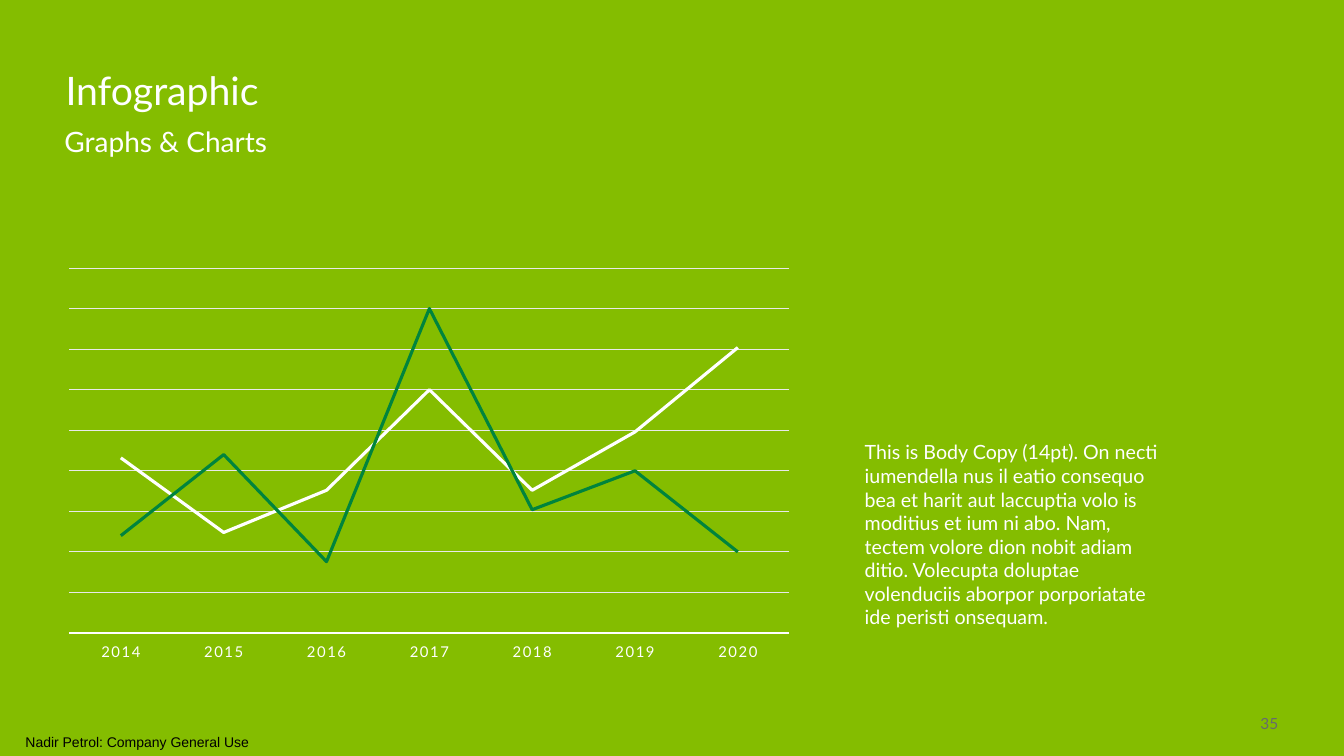
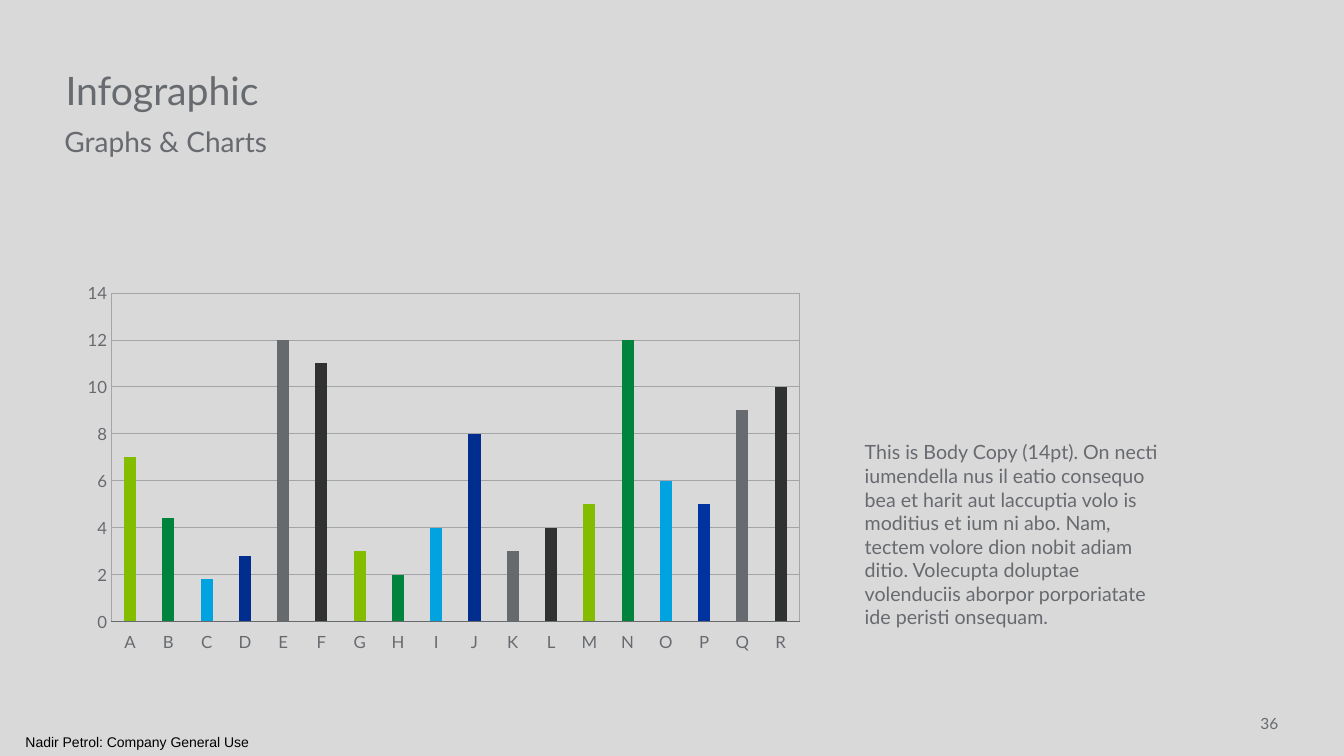
from itertools import cycle

from lxml import etree
from pptx import Presentation
from pptx.chart.data import CategoryChartData
from pptx.dml.color import RGBColor as RGB
from pptx.enum.chart import XL_CHART_TYPE as CT, XL_MARKER_STYLE as MARKER
from pptx.enum.chart import XL_TICK_LABEL_POSITION as LABELS, XL_TICK_MARK as TICK
from pptx.enum.text import MSO_ANCHOR as ANCHOR, PP_ALIGN as ALIGN
from pptx.oxml import parse_xml
from pptx.oxml.ns import nsdecls, qn
from pptx.util import Inches, Pt

C = {
    "white": "FFFFFF", "black": "000000", "text": "676A6E", "grey": "676A6C",
    "lime": "84BD00", "green": "00843D", "sky": "00A3E0", "navy": "002D8E",
    "blue": "0033A0", "charcoal": "303131", "paper": "DAD9DA",
    "pale grid": "E8E9E9", "grid": "A3A5A9",
}
C = {name: RGB.from_string(value) for name, value in C.items()}
FOOTER = "Nadir Petrol: Company General Use"
BODY = (
    "This is Body Copy (14pt). On necti iumendella nus il eatio consequo bea et "
    "harit aut laccuptia volo is moditius et ium ni abo. Nam, tectem volore dion "
    "nobit adiam ditio. Volecupta doluptae volenduciis aborpor porporiatate ide "
    "peristi onsequam."
)

prs = Presentation()
prs.slide_width, prs.slide_height = Inches(13.33), Inches(7.5)


def place(left, top, width, height):
    w, h = prs.slide_width / 100, prs.slide_height / 100
    return int(left * w), int(top * h), int(width * w), int(height * h)


def add_text(s, text, box, size, color, font="Lato", align=ALIGN.LEFT,
             anchor=ANCHOR.TOP, inset=(0, 0.05)):
    tf = s.shapes.add_textbox(*place(*box)).text_frame
    tf.word_wrap = True
    tf.vertical_anchor = anchor
    tf.margin_left = tf.margin_right = Inches(inset[0])
    tf.margin_top = tf.margin_bottom = Inches(inset[1])
    p = tf.paragraphs[0]
    p.text, p.alignment = text, align
    p.font.name, p.font.size, p.font.color.rgb = font, Pt(size), C[color]


pages = [
    dict(number=35, bg="lime", ink="white", kind=CT.LINE,
         box=(4.05, 34.4, 55.8, 53.07), plot=(0.02, 0.02, 0.96, 0.91),
         cats=[str(year) for year in range(2014, 2021)],
         series=[[54, 31, 44, 75, 44, 62, 88], [30, 55, 22, 100, 38, 50, 25]],
         label_size=10.6, axis=("white", 1.5), grid="pale grid", top=112.5, step=12.5),
    dict(number=36, bg="paper", ink="text", kind=CT.COLUMN_CLUSTERED,
         box=(4.58, 28, 56.63, 58.93), plot=(0.065, 0.183, 0.905, 0.737),
         cats=list("ABCDEFGHIJKLMNOPQR"),
         series=[[7, 4.4, 1.8, 2.8, 12, 11, 3, 2, 4, 8, 3, 4, 5, 12, 6, 5, 9, 10]],
         label_size=12, axis=("grey", 0.75), grid="grid", top=14, step=2),
]

for page in pages:
    s = prs.slides.add_slide(prs.slide_layouts[6])
    s.background.fill.solid()
    s.background.fill.fore_color.rgb = C[page["bg"]]
    ink = page["ink"]

    add_text(s, str(page["number"]), (92.18, 94, 2.93, 3.33), 11, "text",
             align=ALIGN.RIGHT, anchor=ANCHOR.MIDDLE)
    add_text(s, FOOTER, (0, 96.4, 20.4, 3.6), 10, "black", font="Arial",
             align=ALIGN.CENTER, anchor=ANCHOR.MIDDLE, inset=(0, 0))
    add_text(s, "Infographic", (4.88, 8.13, 37.13, 7.6), 28, ink)
    add_text(s, "Graphs & Charts", (4.05, 15.87, 37.13, 7.6), 20, ink, inset=(0.1, 0.05))
    add_text(s, BODY, (63.6, 57.6, 23.7, 41.47), 14, ink, inset=(0.1, 0.05))

    data = CategoryChartData()
    data.categories = page["cats"]
    for n, values in enumerate(page["series"], 1):
        data.add_series(f"Series {n}", values)
    chart = s.shapes.add_chart(page["kind"], *place(*page["box"]), data).chart
    chart.has_title = chart.has_legend = False
    chart.font.name, chart.font.size, chart.font.color.rgb = "Lato", Pt(10), C["text"]

    cat, val = chart.category_axis, chart.value_axis
    for axis in (cat, val):
        axis.major_tick_mark = axis.minor_tick_mark = TICK.NONE
        font = axis.tick_labels.font
        font.name, font.size, font.color.rgb = "Lato", Pt(page["label_size"]), C[ink]
    cat.has_major_gridlines = False
    cat.tick_label_position = LABELS.LOW
    line_color, line_width = page["axis"]
    cat.format.line.color.rgb, cat.format.line.width = C[line_color], Pt(line_width)
    val.minimum_scale, val.maximum_scale, val.major_unit = 0, page["top"], page["step"]
    val.format.line.fill.background()
    val.has_major_gridlines = True
    grid = val.major_gridlines.format.line
    grid.color.rgb, grid.width = C[page["grid"]], Pt(0.75)

    area = chart._chartSpace.find(".//" + qn("c:plotArea"))
    for old in area.findall(qn("c:layout")):
        area.remove(old)
    layout = parse_xml(f"<c:layout {nsdecls('c')}><c:manualLayout/></c:layout>")
    settings = [("layoutTarget", "inner"), ("xMode", "edge"), ("yMode", "edge")]
    for tag, value in settings + list(zip("xywh", page["plot"])):
        etree.SubElement(layout[0], qn("c:" + tag)).set("val", str(value))
    area.insert(0, layout)

    plot = chart.plots[0]
    plot.vary_by_categories = False
    if page["kind"] == CT.LINE:
        val.visible = False
        cat_font = area.find(qn("c:catAx")).find(".//" + qn("a:defRPr"))
        cat_font.set("spc", "120")
        for series, name in zip(plot.series, ("white", "green")):
            series.smooth = False
            series.marker.style = MARKER.NONE
            series.format.line.color.rgb, series.format.line.width = C[name], Pt(2.25)
    else:
        plot.gap_width, plot.overlap = 219, -27
        series = plot.series[0]
        series.format.fill.solid()
        series.format.fill.fore_color.rgb = C["navy"]
        colors = cycle(("lime", "green", "sky", "navy", "grey", "charcoal"))
        special = {"P": "blue", "Q": "text"}
        for i, (letter, name) in enumerate(zip(page["cats"], colors)):
            fill = series.points[i].format.fill
            fill.solid()
            fill.fore_color.rgb = C[special.get(letter, name)]
        area.append(parse_xml(
            f"<c:spPr {nsdecls('c', 'a')}><a:noFill/><a:ln w='9525'><a:solidFill>"
            f"<a:srgbClr val='{C['grid']}'/></a:solidFill></a:ln></c:spPr>"))

prs.save("out.pptx")
